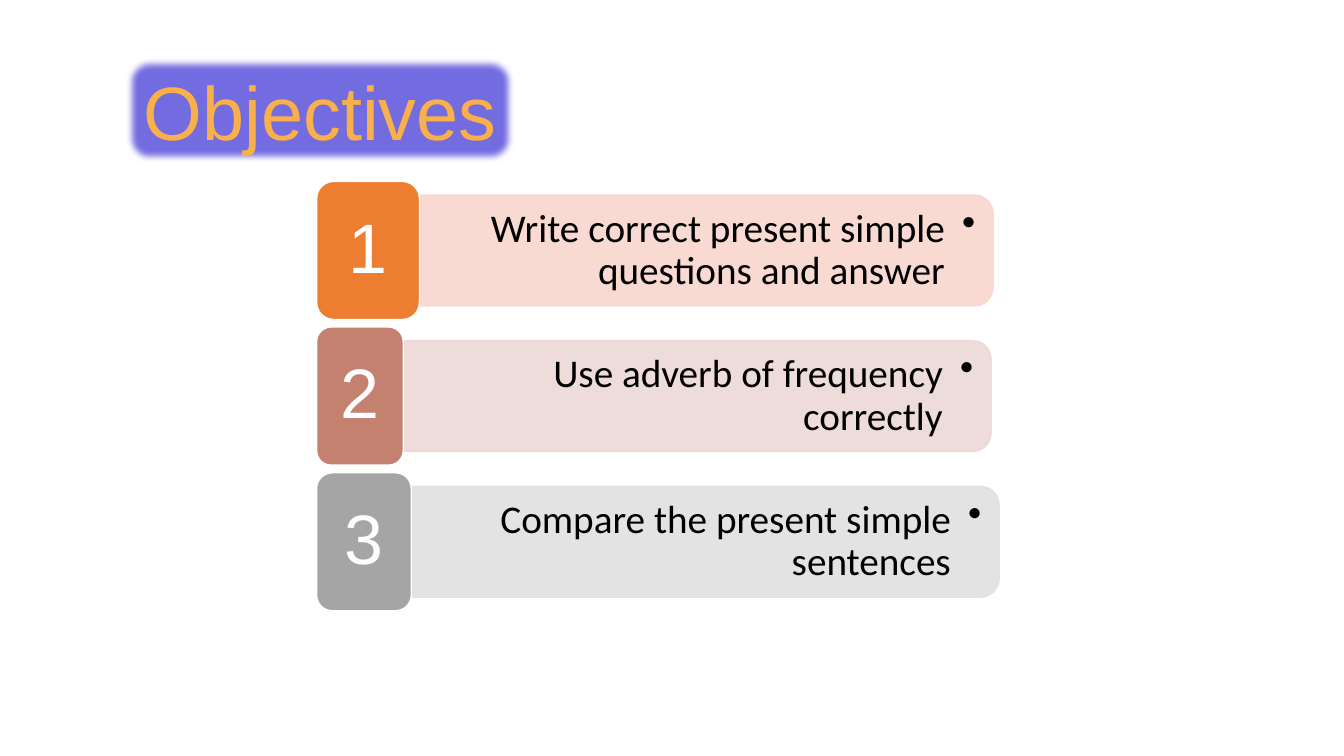
from lxml.etree import SubElement
from pptx import Presentation
from pptx.dml.color import RGBColor
from pptx.enum.shapes import MSO_SHAPE
from pptx.enum.text import MSO_ANCHOR, PP_ALIGN
from pptx.oxml.ns import qn
from pptx.util import Inches, Pt

COLORS = {
    "title_fill": "746CE1", "title_line": "325491", "title_text": "FAB04A",
    "white": "FFFFFF", "black": "000000",
}
TITLE = "Objectives"
OBJECTIVES = [
    ("1", "Write correct present simple questions and answer", "ED7D31", "F8D7CE", 1.02, 5.69),
    ("2", "Use adverb of frequency correctly", "C48170", "EDD9D7", 0.86, 5.83),
    ("3", "Compare the present simple sentences", "A5A5A5", "E1E1E1", 0.94, 5.83),
]
LIST_LEFT, LIST_TOP = 3.14, 1.8
ROW_PITCH, TILE_HEIGHT, BAR_HEIGHT, TEXT_HEIGHT = 1.445, 1.37, 1.1, 0.99
BULLET_INDENT = Inches(0.31)


def add_box(slide, kind, box, fill, line):
    shape = slide.shapes.add_shape(kind, *(Inches(length) for length in box))
    shape.shadow.inherit = False
    shape.fill.solid()
    shape.fill.fore_color.rgb = RGBColor.from_string(fill)
    shape.line.color.rgb = RGBColor.from_string(line)
    shape.line.width = Pt(1)
    return shape


def write(shape, text, size, color, font, align, insets, spacing=1.0, script_font="Arial"):
    frame = shape.text_frame
    frame.text = text
    frame.word_wrap = True
    frame.vertical_anchor = MSO_ANCHOR.MIDDLE
    frame.margin_left = frame.margin_right = Inches(insets[0])
    frame.margin_top = frame.margin_bottom = Inches(insets[1])
    paragraph = frame.paragraphs[0]
    paragraph.alignment = align
    paragraph.line_spacing = spacing
    properties = paragraph._p.get_or_add_pPr()
    properties.set("rtl", "1")
    run = paragraph.runs[0]
    run.font.size = Pt(size)
    run.font.name = font
    run.font.color.rgb = RGBColor.from_string(color)
    SubElement(run._r.get_or_add_rPr(), qn("a:cs"), typeface=script_font)
    return properties


def add_title(slide):
    title = add_box(slide, MSO_SHAPE.ROUNDED_RECTANGLE, (1.25, 0.58, 3.85, 1.03),
                    COLORS["title_fill"], COLORS["title_line"])
    effects = title._element.spPr.find(qn("a:effectLst"))
    SubElement(effects, qn("a:softEdge"), rad=str(Inches(0.07)))
    write(title, TITLE, 54, COLORS["title_text"], "Arial", PP_ALIGN.CENTER, (0.1, 0.05))


def add_objective(slide, row, number, text, tile_color, bar_color, tile_width, bar_width):
    top = LIST_TOP + row * ROW_PITCH
    middle = top + TILE_HEIGHT / 2
    bar_left = LIST_LEFT + tile_width
    bar_center = bar_left + bar_width / 2

    bar = add_box(slide, MSO_SHAPE.ROUND_2_SAME_RECTANGLE,
                  (bar_center - BAR_HEIGHT / 2, middle - bar_width / 2, BAR_HEIGHT, bar_width),
                  bar_color, bar_color)
    bar.rotation = 90
    for color in bar._element.spPr.iter(qn("a:srgbClr")):
        SubElement(color, qn("a:alpha"), val="90000")

    label = slide.shapes.add_textbox(Inches(bar_left), Inches(middle - TEXT_HEIGHT / 2),
                                     Inches(bar_width - 0.05), Inches(TEXT_HEIGHT))
    properties = write(label, text, 28, COLORS["black"], "Calibri", PP_ALIGN.RIGHT,
                       (0.12, 0.06), 0.9, "Calibri")
    properties.set("marL", str(BULLET_INDENT))
    properties.set("indent", str(-BULLET_INDENT))
    SubElement(properties, qn("a:buChar"), char="•")

    tile = add_box(slide, MSO_SHAPE.ROUNDED_RECTANGLE, (LIST_LEFT, top, tile_width, TILE_HEIGHT),
                   tile_color, COLORS["white"])
    write(tile, number, 50, COLORS["white"], "Calibri", PP_ALIGN.CENTER, (0.1, 0.1), 0.9)


def main():
    presentation = Presentation()
    presentation.slide_width = Inches(13.33)
    presentation.slide_height = Inches(7.5)
    slide = presentation.slides.add_slide(presentation.slide_layouts[6])
    for row, objective in enumerate(OBJECTIVES):
        add_objective(slide, row, *objective)
    add_title(slide)
    presentation.save("out.pptx")


if __name__ == "__main__":
    main()
